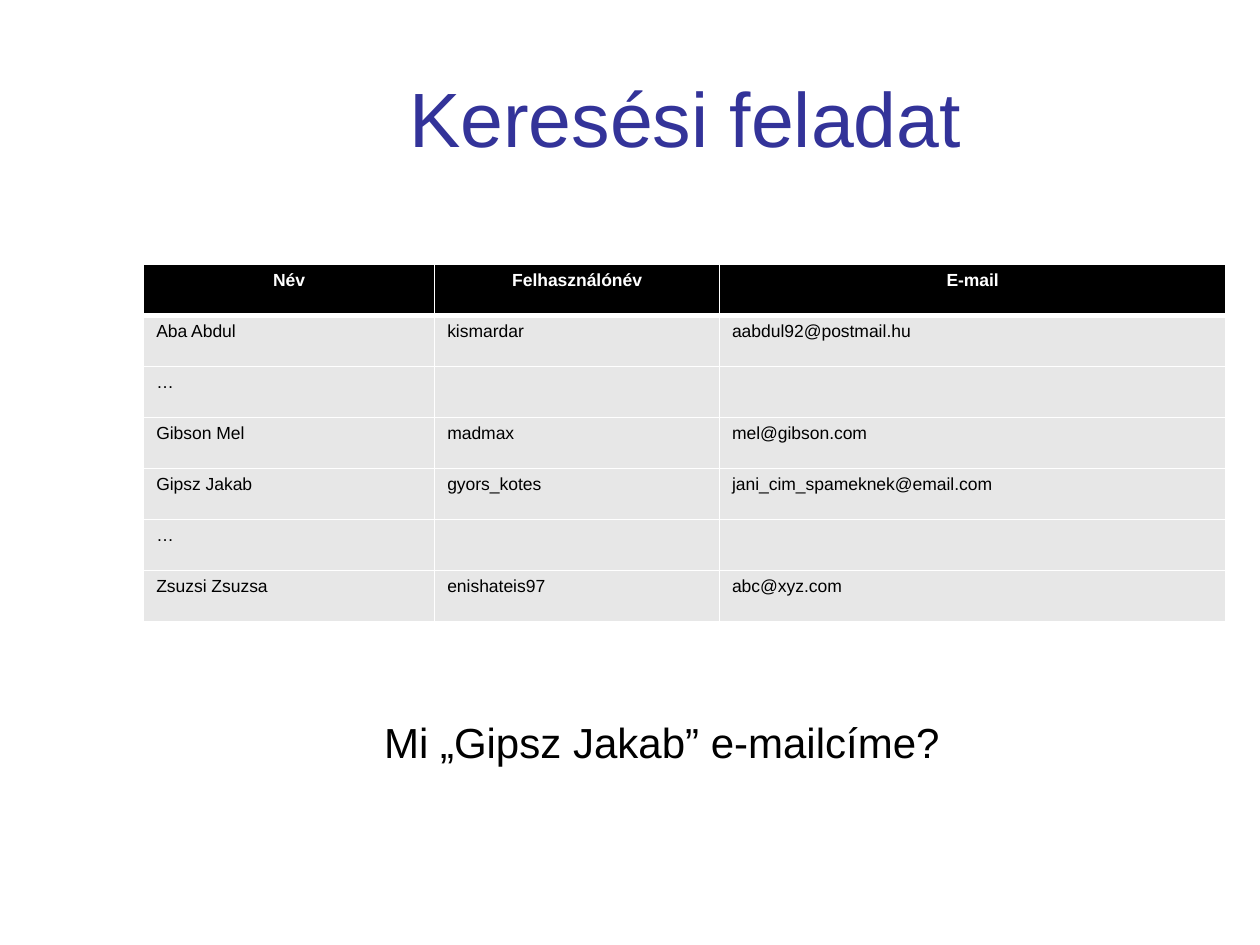
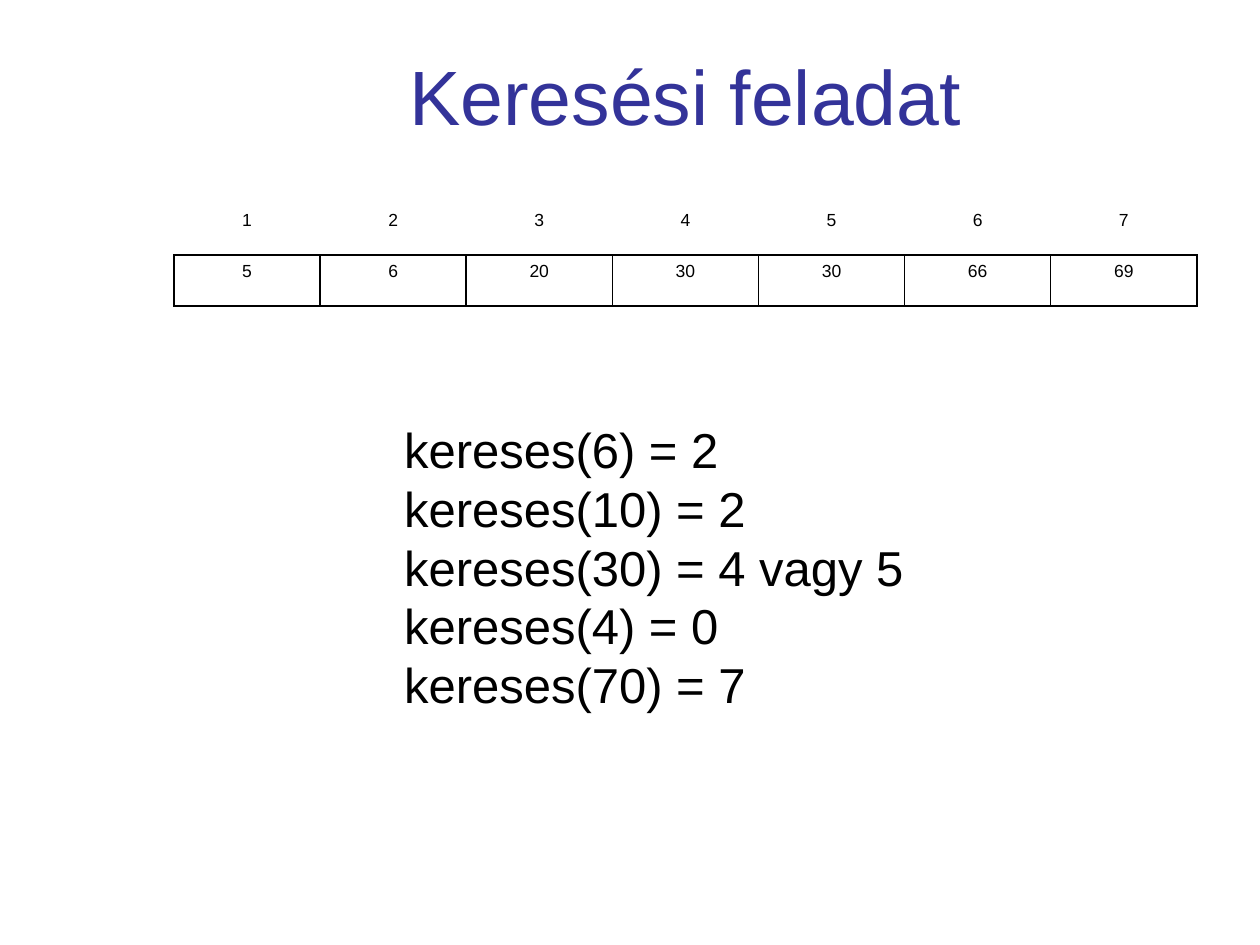
from lxml import etree
from pptx import Presentation
from pptx.dml.color import RGBColor
from pptx.enum.text import MSO_ANCHOR, PP_ALIGN
from pptx.oxml.ns import qn
from pptx.util import Inches, Pt

LEFT, CENTER = PP_ALIGN.LEFT, PP_ALIGN.CENTER
MIDDLE = MSO_ANCHOR.MIDDLE

FONT = "Arial"
BLUE = RGBColor(0x33, 0x33, 0x99)
BLACK = RGBColor(0, 0, 0)
WHITE = RGBColor(0xFF, 0xFF, 0xFF)
GREY = RGBColor(0xE7, 0xE7, 0xE7)

TITLE = "Keresési feladat"
TITLE_ONLY = 5
PLAIN_TABLE_STYLE = "{2D5ABB26-0587-4C30-8999-92F81FD0307C}"
ROW_HEIGHT = 0.405

USERS = [
    ("Név", "Felhasználónév", "E-mail"),
    ("Aba Abdul", "kismardar", "aabdul92@postmail.hu"),
    ("…", "", ""),
    ("Gibson Mel", "madmax", "mel@gibson.com"),
    ("Gipsz Jakab", "gyors_kotes", "jani_cim_spameknek@email.com"),
    ("…", "", ""),
    ("Zsuzsi Zsuzsa", "enishateis97", "abc@xyz.com"),
]
VALUES = [5, 6, 20, 30, 30, 66, 69]
SEARCHES = ["kereses(6) = 2", "kereses(10) = 2", "kereses(30) = 4 vagy 5",
            "kereses(4) = 0", "kereses(70) = 7"]


def style(p, size, color=BLACK, align=LEFT, bold=False):
    p.alignment = align
    font = p.font
    font.name, font.size, font.bold = FONT, Pt(size), bold
    font.color.rgb = color


def add_slide(prs, title_top):
    """Add a slide with the shared title style."""
    s = prs.slides.add_slide(prs.slide_layouts[TITLE_ONLY])
    title = s.shapes.title
    title.left, title.top = Inches(1.38), Inches(title_top)
    title.width, title.height = Inches(8.12), Inches(1.25)
    tf = title.text_frame
    tf.text = TITLE
    tf.vertical_anchor = MIDDLE
    style(tf.paragraphs[0], 44, BLUE, CENTER)
    return s


def add_text(s, lines, left, top, width, height, size):
    box = s.shapes.add_textbox(Inches(left), Inches(top), Inches(width), Inches(height))
    tf = box.text_frame
    tf.word_wrap = False
    tf.text = "\n".join(lines)
    for p in tf.paragraphs:
        style(p, size)


def add_table(s, rows, left, top, widths):
    """Add an unstyled table holding the texts of rows."""
    frame = s.shapes.add_table(len(rows), len(widths), Inches(left), Inches(top),
                               Inches(sum(widths)), Inches(ROW_HEIGHT * len(rows)))
    table = frame.table
    table.first_row = table.horz_banding = False
    table._tbl.tblPr.find(qn("a:tableStyleId")).text = PLAIN_TABLE_STYLE
    for column, width in zip(table.columns, widths):
        column.width = Inches(width)
    for row, texts in zip(table.rows, rows):
        row.height = Inches(ROW_HEIGHT)
        for cell, text in zip(row.cells, texts):
            cell.text = str(text)
    return table


def set_borders(cell, color, **widths):
    """Draw borders of the given point widths; keys are L, R, T and B."""
    tc_pr = cell._tc.get_or_add_tcPr()
    for side in "LRTB":
        if side in widths:
            ln = etree.SubElement(tc_pr, qn(f"a:ln{side}"), w=str(Pt(widths[side])))
            fill = etree.SubElement(ln, qn("a:solidFill"))
            etree.SubElement(fill, qn("a:srgbClr"), val=str(color))


def fill_cell(cell, color):
    cell.fill.solid()
    cell.fill.fore_color.rgb = color


def users_slide(prs):
    s = add_slide(prs, 0.3)
    table = add_table(s, USERS, 1.14, 2.1, [2.31, 2.26, 4.02])
    for i, row in enumerate(table.rows):
        header = i == 0
        for cell in row.cells:
            set_borders(cell, WHITE, L=1, R=1, T=3 if i == 1 else 1, B=3 if header else 1)
            fill_cell(cell, BLACK if header else GREY)
            p = cell.text_frame.paragraphs[0]
            if header:
                style(p, 10, WHITE, CENTER, bold=True)
            else:
                style(p, 10)
    add_text(s, ["Mi „Gipsz Jakab” e-mailcíme?"], 2.95, 5.64, 4.66, 0.5, 24)


def array_slide(prs):
    s = add_slide(prs, 0.13)
    count = len(VALUES)
    table = add_table(s, [range(1, count + 1), VALUES], 1.38, 1.62, [8.12 / count] * count)
    for cell in table.iter_cells():
        style(cell.text_frame.paragraphs[0], 10, align=CENTER)
    # Indexes stand free above the boxed values
    for index_cell, value_cell in zip(table.rows[0].cells, table.rows[1].cells):
        set_borders(index_cell, BLACK, B=1)
        set_borders(value_cell, BLACK, L=1, R=1, T=1, B=1)
    add_text(s, SEARCHES, 3.11, 3.28, 4.21, 2.46, 28)


def main():
    prs = Presentation()
    prs.slide_width, prs.slide_height = Inches(10), Inches(7.5)
    users_slide(prs)
    array_slide(prs)
    prs.save("out.pptx")


if __name__ == "__main__":
    main()
